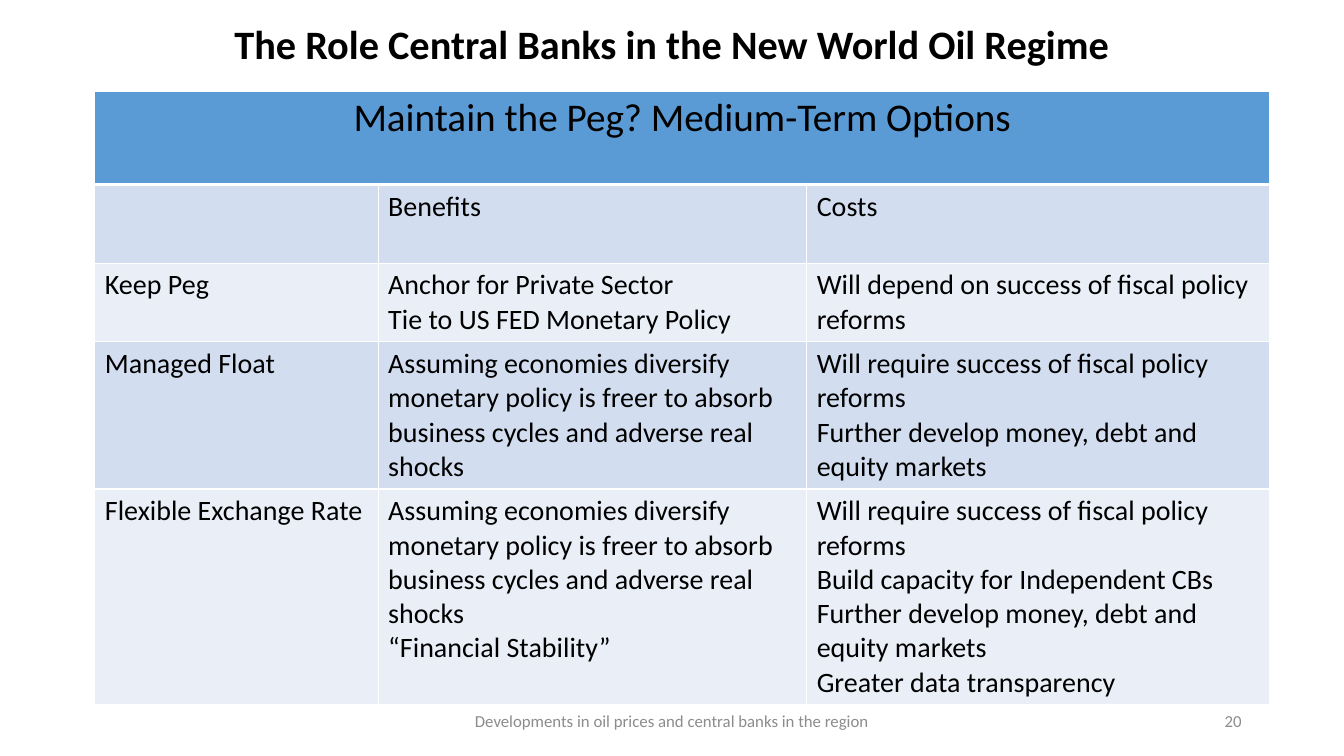
from lxml.etree import SubElement
from pptx import Presentation
from pptx.dml.color import RGBColor
from pptx.enum.text import MSO_ANCHOR as Anchor, MSO_AUTO_SIZE as AutoSize, PP_ALIGN as Align
from pptx.oxml.ns import qn
from pptx.util import Cm, Pt

COLORS = {"text": "000000", "muted": "8C8C8C", "header": "5B9BD5",
          "dark_band": "D2DEEF", "light_band": "EAEFF7", "border": "FFFFFF"}
TITLE_FORMAT = {"size": Pt(28.8), "bold": True}
HEADER_FORMAT = {"size": Pt(28), "bold": False}
BODY_FORMAT = {"size": Pt(20), "bold": False}
FOOTER_FORMAT = {"size": Pt(12), "bold": False}

COLUMN_WIDTHS = [7.14, 10.8, 11.66]
ROW_HEIGHTS = [2.34, 1.98, 1.98, 3.58, 5.26]
FREER_POLICY = ("Assuming economies diversify monetary policy is freer to absorb "
                "business cycles and adverse real shocks")
FISCAL_SUCCESS = "Will require success of fiscal policy reforms"
DEEPER_MARKETS = "Further develop money, debt and equity markets"
OPTIONS = [
    [["Maintain the Peg? Medium-Term Options"], [], []],
    [[], ["Benefits"], ["Costs"]],
    [["Keep Peg"],
     ["Anchor for Private Sector", "Tie to US FED Monetary Policy"],
     ["Will depend on success of fiscal policy reforms"]],
    [["Managed Float"], [FREER_POLICY], [FISCAL_SUCCESS, DEEPER_MARKETS]],
    [["Flexible Exchange Rate"],
     [FREER_POLICY, "“Financial Stability”"],
     [FISCAL_SUCCESS, "Build capacity for Independent CBs", DEEPER_MARKETS,
      "Greater data transparency"]],
]


def write(frame, lines, font_format, align, color="text", spacing=1.0):
    """Fill a text frame with equally formatted paragraphs."""
    frame.text = "\n".join(lines)
    for paragraph in frame.paragraphs:
        paragraph.alignment = align
        paragraph.line_spacing = spacing
        paragraph.space_before = Pt(0)
        for name, value in {"name": "Calibri", **font_format}.items():
            setattr(paragraph.font, name, value)
        paragraph.font.color.rgb = RGBColor.from_string(COLORS[color])


def place_title(slide, box):
    """Put the slide heading into the title placeholder."""
    heading = slide.shapes.title
    for name, value in zip(("left", "top", "width", "height"), box):
        setattr(heading, name, Cm(value))
    frame = heading.text_frame
    write(frame, ["The Role Central Banks in the New World Oil Regime"],
          TITLE_FORMAT, Align.CENTER, spacing=0.9)
    for name, value in {"vertical_anchor": Anchor.MIDDLE, "word_wrap": True,
                        "auto_size": AutoSize.NONE}.items():
        setattr(frame, name, value)


def draw_borders(cell, bottom_width):
    """Give a cell white borders with the given bottom width."""
    properties = cell._tc.get_or_add_tcPr()
    widths = {"a:lnL": 1, "a:lnR": 1, "a:lnT": 1, "a:lnB": bottom_width}
    for position, (side, width) in enumerate(widths.items()):
        line = SubElement(properties, qn(side), w=str(Pt(width)))
        fill = SubElement(line, qn("a:solidFill"))
        SubElement(fill, qn("a:srgbClr"), val=COLORS["border"])
        properties.insert(position, line)


def place_options(slide, box):
    """Build the table of exchange rate options."""
    left, top, width, height = map(Cm, box)
    options = slide.shapes.add_table(len(ROW_HEIGHTS), len(COLUMN_WIDTHS),
                                     left, top, width, height).table
    options.first_row = options.horz_banding = False
    for column, column_width in zip(options.columns, COLUMN_WIDTHS):
        column.width = Cm(column_width)
    for row_number, (row, row_height) in enumerate(zip(options.rows, ROW_HEIGHTS)):
        row.height = Cm(row_height)
        is_header = row_number == 0
        band = "header" if is_header else "dark_band" if row_number % 2 else "light_band"
        for cell, lines in zip(row.cells, OPTIONS[row_number]):
            write(cell.text_frame, lines, HEADER_FORMAT if is_header else BODY_FORMAT,
                  Align.CENTER if is_header else Align.LEFT,
                  spacing=0.9 if is_header else 1.0)
            cell.fill.solid()
            cell.fill.fore_color.rgb = RGBColor.from_string(COLORS[band])
            draw_borders(cell, 3 if is_header else 1)
    options.cell(0, 0).merge(options.cell(0, len(COLUMN_WIDTHS) - 1))


def place_footer(slide, box, wording, align):
    """Add one muted footer entry."""
    frame = slide.shapes.add_textbox(*map(Cm, box)).text_frame
    frame.word_wrap = True
    frame.vertical_anchor = Anchor.MIDDLE
    write(frame, [wording], FOOTER_FORMAT, align, "muted")


def main():
    """Build and save the slide."""
    deck = Presentation()
    deck.slide_width, deck.slide_height = Cm(33.87), Cm(19.05)
    slide = deck.slides.add_slide(deck.slide_layouts[5])
    place_title(slide, (2.33, 0.4, 29.21, 1.52))
    place_options(slide, (2.39, 2.31, sum(COLUMN_WIDTHS), sum(ROW_HEIGHTS)))
    place_footer(slide, (11.22, 17.65, 11.43, 1.01),
                 "Developments in oil prices and central banks in the region", Align.CENTER)
    place_footer(slide, (23.92, 17.65, 7.62, 1.01), "20", Align.RIGHT)
    deck.save("out.pptx")


if __name__ == "__main__":
    main()
